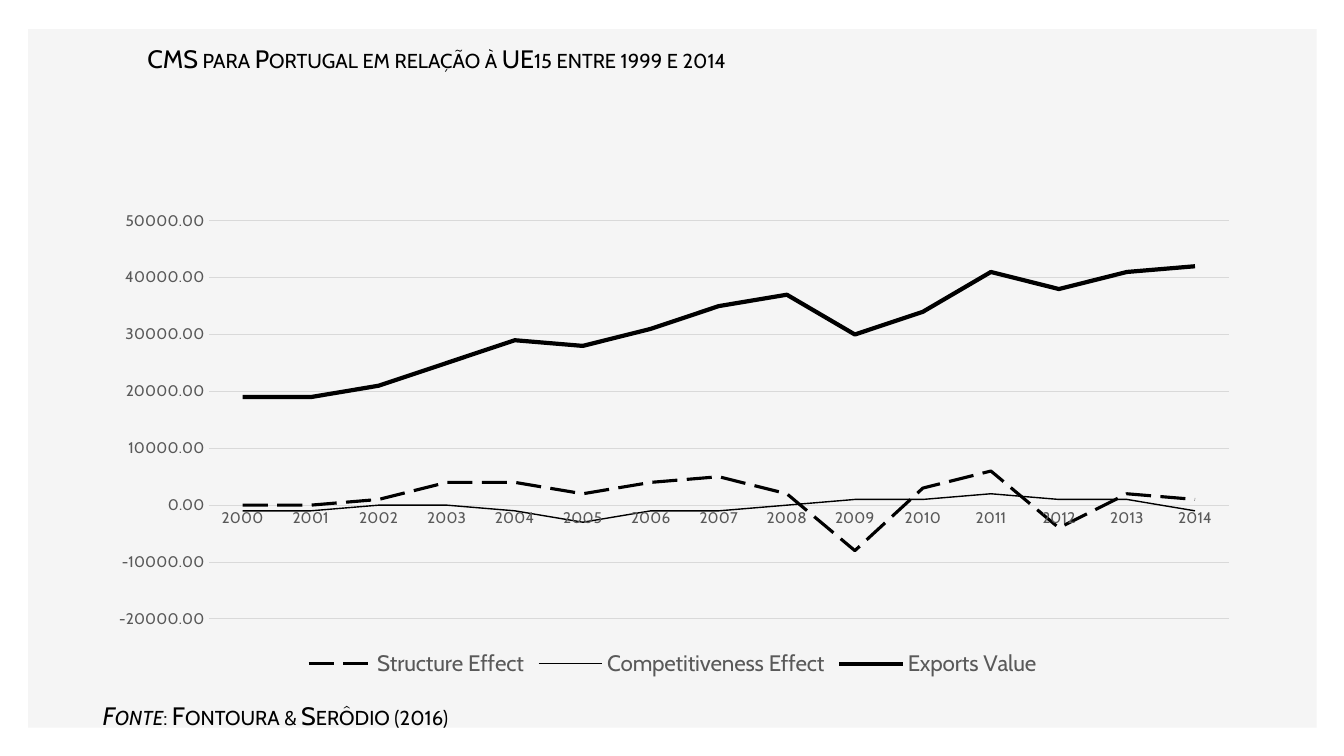
from lxml.etree import SubElement
from pptx import Presentation
from pptx.chart.data import CategoryChartData
from pptx.dml.color import RGBColor
from pptx.enum.chart import XL_CHART_TYPE, XL_LEGEND_POSITION, XL_TICK_MARK
from pptx.enum.dml import MSO_LINE
from pptx.enum.shapes import MSO_SHAPE
from pptx.enum.text import MSO_ANCHOR, MSO_AUTO_SIZE, PP_ALIGN
from pptx.oxml.ns import qn
from pptx.util import Inches, Pt

FONT = "Cabin"
BLACK, GREY, GRID, PANEL = "000000", "595959", "D9D9D9", "F5F5F5"

YEARS = [str(year) for year in range(2000, 2015)]
# name, values in thousands, line width, dash
SERIES = [
    ("Structure Effect",
     [0, 0, 1, 4, 4, 2, 4, 5, 2, -8, 3, 6, -4, 2, 1], 2.25, MSO_LINE.LONG_DASH),
    ("Competitiveness Effect",
     [-1, -1, 0, 0, -1, -3, -1, -1, 0, 1, 1, 2, 1, 1, -1], 1, MSO_LINE.SOLID),
    ("Exports Value",
     [19, 19, 21, 25, 29, 28, 31, 35, 37, 30, 34, 41, 38, 41, 42], 3, MSO_LINE.SOLID),
]


def color(value):
    return RGBColor.from_string(value)


def set_font(font, size, value=BLACK):
    font.name = FONT
    font.size = Pt(size)
    font.bold = False
    font.color.rgb = color(value)


def set_line(line, value, width):
    line.color.rgb = color(value)
    line.width = Pt(width)


def add_text(paragraph, text, size=18, italic=False, align=PP_ALIGN.LEFT):
    """Add a run in small capitals."""
    paragraph.alignment = align
    run = paragraph.add_run()
    run.text = text
    set_font(run.font, size)
    run.font.italic = italic
    run.font._element.set("cap", "small")


def add_panel(slide):
    panel = slide.shapes.add_shape(MSO_SHAPE.RECTANGLE, Inches(0.28), Inches(0.29),
                                   Inches(12.78), Inches(6.93))
    panel.shadow.inherit = False
    panel.fill.solid()
    panel.fill.fore_color.rgb = color(PANEL)
    panel.line.fill.background()
    # Send the panel behind the title
    slide.shapes._spTree.insert(2, panel._element)


def add_title(slide, text):
    title = slide.shapes.title
    title.left, title.top = Inches(0.57), Inches(0.43)
    title.width, title.height = Inches(7.52), Inches(0.7)
    frame = title.text_frame
    frame.word_wrap = True
    frame.auto_size = MSO_AUTO_SIZE.NONE
    frame.vertical_anchor = MSO_ANCHOR.TOP
    frame.margin_top = frame.margin_bottom = 0
    add_text(frame.paragraphs[0], text, align=PP_ALIGN.CENTER)


def set_plot_layout(chart, **fractions):
    """Fix the inner plot area as fractions of the chart."""
    plot_area = chart._chartSpace.chart.plotArea
    layout = plot_area.find(qn("c:layout"))
    if layout is None:
        layout = SubElement(plot_area, qn("c:layout"))
        plot_area.insert(0, layout)
    manual = SubElement(layout, qn("c:manualLayout"))
    settings = {"layoutTarget": "inner", "xMode": "edge", "yMode": "edge", **fractions}
    for name, value in settings.items():
        SubElement(manual, qn(f"c:{name}")).set("val", str(value))


def format_axis(axis):
    axis.major_tick_mark = axis.minor_tick_mark = XL_TICK_MARK.NONE
    set_font(axis.tick_labels.font, 11, GREY)


def add_line_chart(slide):
    data = CategoryChartData(number_format="0.00")
    data.categories = YEARS
    for name, thousands, _, _ in SERIES:
        data.add_series(name, [value * 1000 for value in thousands])
    chart = slide.shapes.add_chart(XL_CHART_TYPE.LINE, Inches(0.92), Inches(2),
                                   Inches(11.5), Inches(4.76), data).chart
    chart.has_title = False
    set_font(chart.font, 10)
    set_plot_layout(chart, x=0.1, y=0.04, w=0.88, h=0.83)

    # Series lines
    plot = chart.plots[0]
    plot.vary_by_categories = False
    for series, (_, _, width, dash) in zip(plot.series, SERIES):
        series.smooth = False
        set_line(series.format.line, BLACK, width)
        series.format.line.dash_style = dash

    # Axes
    format_axis(chart.category_axis)
    set_line(chart.category_axis.format.line, GRID, 0.75)
    values = chart.value_axis
    format_axis(values)
    values.minimum_scale, values.maximum_scale = -20000, 50000
    values.major_unit = 10000
    values.tick_labels.number_format = "0.00"
    values.tick_labels.number_format_is_linked = False
    values.format.line.fill.background()
    set_line(values.major_gridlines.format.line, GRID, 0.75)

    # Legend
    chart.has_legend = True
    chart.legend.position = XL_LEGEND_POSITION.BOTTOM
    chart.legend.include_in_layout = False
    set_font(chart.legend.font, 16, GREY)


def add_source_note(slide):
    box = slide.shapes.add_textbox(Inches(0.92), Inches(6.9), Inches(3.63), Inches(0.4))
    box.text_frame.word_wrap = False
    box.text_frame.auto_size = MSO_AUTO_SIZE.SHAPE_TO_FIT_TEXT
    paragraph = box.text_frame.paragraphs[0]
    add_text(paragraph, "Fonte", italic=True)
    add_text(paragraph, ": Fontoura & Serôdio (2016)", align=PP_ALIGN.JUSTIFY)


def main():
    presentation = Presentation()
    presentation.slide_width = Inches(13.33)
    presentation.slide_height = Inches(7.5)
    slide = presentation.slides.add_slide(presentation.slide_layouts[5])
    add_panel(slide)
    add_title(slide, "CMS para Portugal em relação à UE15 entre 1999 e 2014")
    add_line_chart(slide)
    add_source_note(slide)
    presentation.save("out.pptx")


if __name__ == "__main__":
    main()
